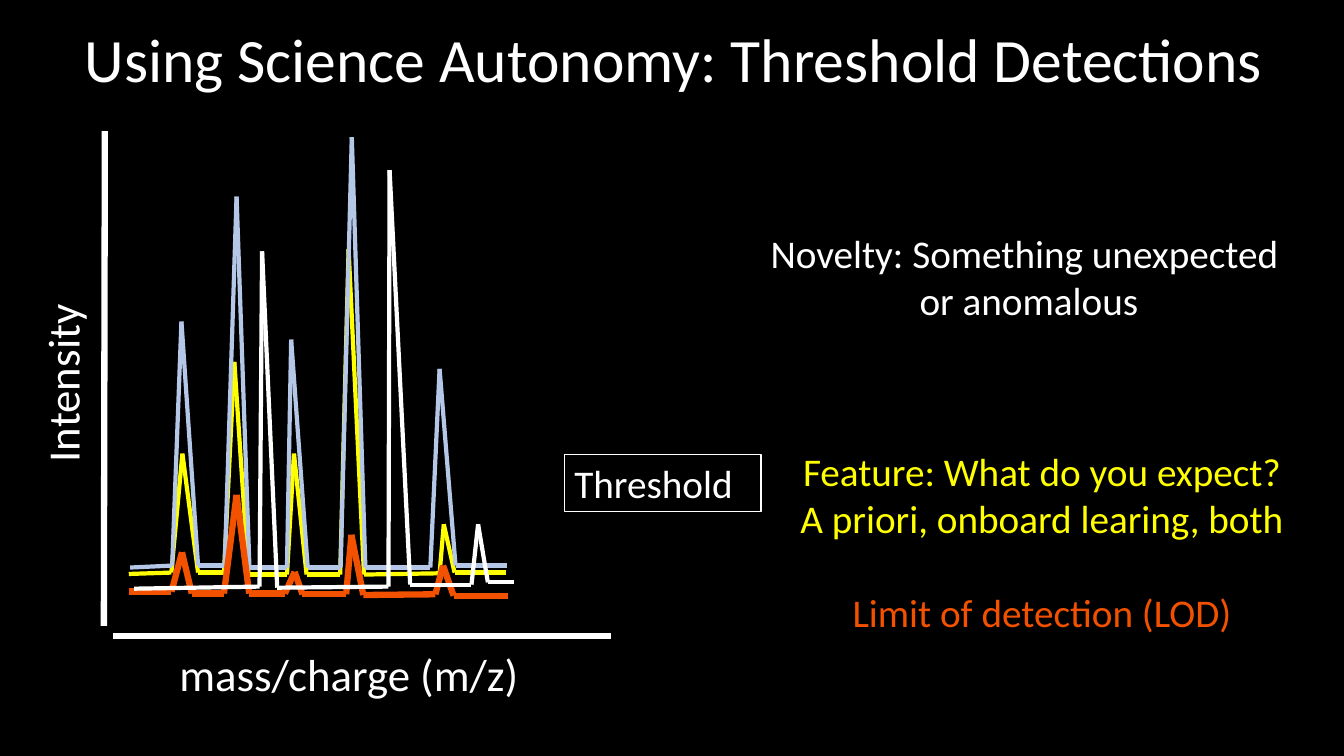
import itertools

import pptx
import pptx.dml.color
import pptx.enum.shapes
import pptx.enum.text
import pptx.oxml.ns
import pptx.util
from lxml import etree

Pt = pptx.util.Pt
ALIGN = pptx.enum.text.PP_ALIGN
FIT = pptx.enum.text.MSO_AUTO_SIZE

COLORS = {"black": "000000", "white": "FFFFFF", "yellow": "FFFF00",
          "blue": "B4C7E7", "orange": "F25100"}
FONT = "Calibri"
TITLE = "Using Science Autonomy: Threshold Detections"

# Labels: lines, box (left, top, width, height), size, color, centred, wrap, turn, frame
LABELS = [
    (["Limit of detection (LOD)"], (536.5, 417, 415.5, 41), 28, "orange", True, True, 0, False),
    (["Feature: What do you expect?", "A priori, onboard learing, both"],
     (536.5, 316, 415.5, 75), 28, "yellow", True, True, 0, False),
    (["Novelty: Something unexpected", " or anomalous"],
     (524, 160, 415.5, 75), 28, "white", True, True, 0, False),
    (["Threshold"], (403.2, 324.7, 140.4, 41), 28, "white", False, False, 0, True),
    (["mass/charge (m/z)"], (121, 458.6, 281.5, 46), 32, "white", False, False, 0, False),
    (["Intensity"], (-23, 247, 134.6, 46), 32, "white", False, False, 270, False),
]

AXES = [[(80.6, 454.3), (436.3, 454.3)], [(74.2, 447.1), (74.9, 93.6)]]

# Spectra: color, line width, corners of the trace
SPECTRA = [
    ("yellow", 3, [
        (92, 410), (122.4, 409), (130.3, 324), (141.5, 409), (160, 409),
        (167.4, 258.5), (177.5, 410.4), (205, 410.4), (210, 324),
        (219, 410.4), (243, 410.4), (249, 178), (260, 410.4),
        (314, 409.5), (317, 374.4), (324.7, 409), (361.4, 409)]),
    ("blue", 3, [
        (93, 405.4), (123, 404), (129.6, 229.7), (141.5, 404), (160.5, 404),
        (169, 140.4), (178.2, 405.4), (205, 405.4), (208, 242.6),
        (219.8, 405.4), (243.3, 405.4), (251.3, 98), (261, 405.4),
        (307.4, 405.4), (314, 263.5), (325.4, 404), (362, 404)]),
    ("orange", 4.5, [
        (92, 422.6), (122.5, 422.6), (130, 394.5), (137, 424), (160, 424),
        (169, 353.5), (178, 424), (203.5, 424), (210.5, 408.5),
        (216, 424.5), (247.3, 424.5), (251, 382), (259.5, 425),
        (311, 424.5), (316.5, 404), (324, 425.5), (363, 425.5)]),
    ("white", 3, [
        (95.8, 420.5), (185.4, 419), (187.2, 179.5), (198, 419.8),
        (277.5, 419), (278.3, 121.5), (293, 417.6), (336.8, 417.6),
        (341.5, 374.5), (348.5, 416), (367.2, 416)]),
]


def rgb(name):
    return pptx.dml.color.RGBColor.from_string(COLORS[name])


def style(par, size, color, align):
    par.font.name = FONT
    par.font.size = Pt(size)
    par.font.color.rgb = rgb(color)
    par.alignment = align


def trace(shapes, corners, color, width):
    """Join each corner to the next with a straight line."""
    for start, end in itertools.pairwise(corners):
        line = shapes.add_connector(
            pptx.enum.shapes.MSO_CONNECTOR.STRAIGHT,
            *(Pt(n) for n in start + end))
        line.line.color.rgb = rgb(color)
        line.line.width = Pt(width)
        etree.SubElement(line._element.spPr, pptx.oxml.ns.qn("a:effectLst"))


def label(shapes, lines, box, size, color, centred, wrap, turn, framed):
    area = shapes.add_textbox(*(Pt(n) for n in box))
    area.rotation = turn
    if framed:
        area.line.color.rgb = rgb("white")
        area.line.width = Pt(0.75)
    frame = area.text_frame
    frame.word_wrap = wrap
    frame.auto_size = FIT.SHAPE_TO_FIT_TEXT
    frame.text = "\n".join(lines)
    for par in frame.paragraphs:
        style(par, size, color, ALIGN.CENTER if centred else ALIGN.LEFT)


def main():
    deck = pptx.Presentation()
    deck.slide_width, deck.slide_height = Pt(960), Pt(540)
    slide = deck.slides.add_slide(deck.slide_layouts[5])
    slide.background.fill.solid()
    slide.background.fill.fore_color.rgb = rgb("black")

    # Title
    title = slide.shapes.title
    title.left, title.top, title.width, title.height = Pt(53.3), Pt(0), Pt(864), Pt(90)
    title.text_frame.text = TITLE
    title.text_frame.auto_size = FIT.NONE
    title.text_frame.vertical_anchor = pptx.enum.text.MSO_ANCHOR.MIDDLE
    head = title.text_frame.paragraphs[0]
    style(head, 44, "white", ALIGN.LEFT)
    head.line_spacing = 0.9

    # Labels and axes
    for item in LABELS:
        label(slide.shapes, *item)
    for axis in AXES:
        trace(slide.shapes, axis, "white", 4.5)

    # One group of lines per spectrum
    for color, width, corners in SPECTRA:
        group = slide.shapes.add_group_shape()
        trace(group.shapes, corners, color, width)

    deck.save("out.pptx")


if __name__ == "__main__":
    main()
